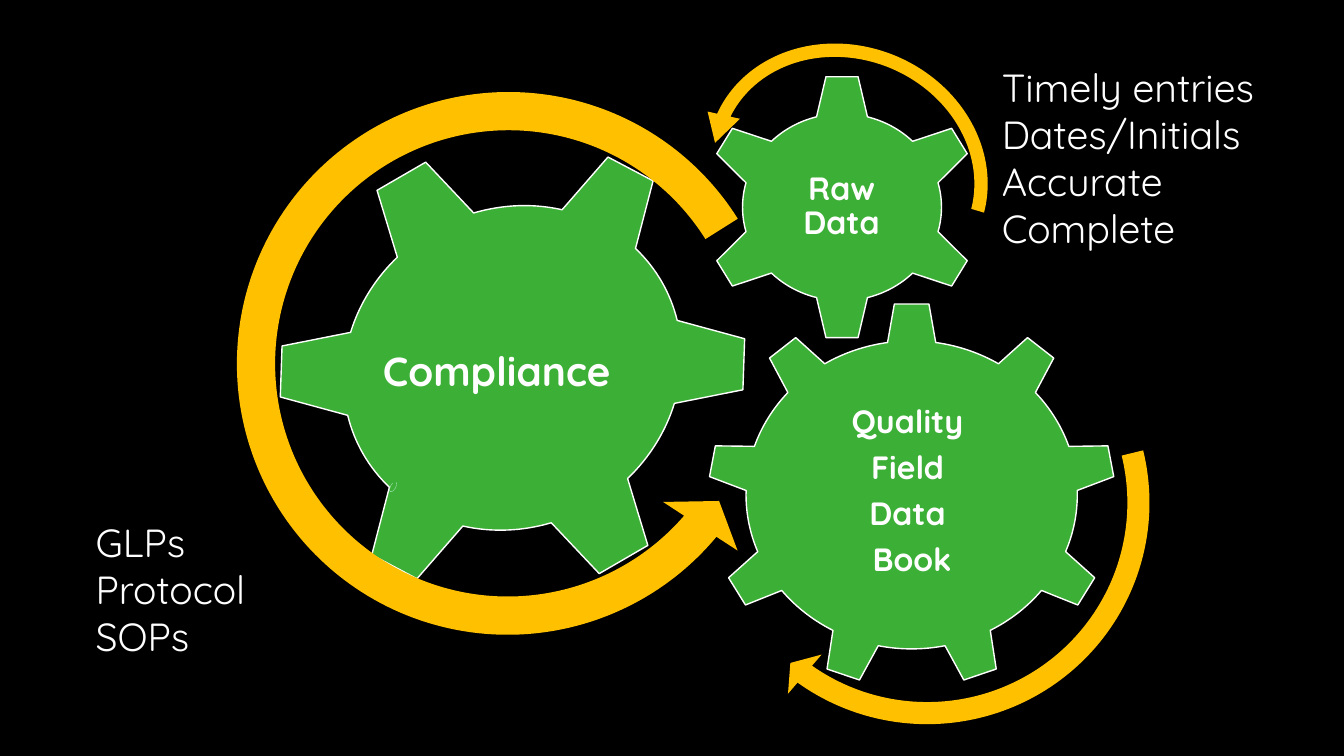
from dataclasses import dataclass
from typing import Optional

from pptx import Presentation
from pptx.dml.color import RGBColor as RGB
from pptx.enum.shapes import MSO_SHAPE as SHAPE
from pptx.enum.text import MSO_ANCHOR as ANCHOR, MSO_AUTO_SIZE as FIT, PP_ALIGN as ALIGN
from pptx.util import Pt


@dataclass(frozen=True)
class Theme:
    font: str = "Quicksand"
    back: RGB = RGB(0x00, 0x00, 0x00)
    text: RGB = RGB(0xFF, 0xFF, 0xFF)
    gear: RGB = RGB(0x3C, 0xB0, 0x36)
    arrow: RGB = RGB(0xFF, 0xC0, 0x00)
    pale: RGB = RGB(0xAB, 0xE5, 0xBF)
    title_size: int = 29
    note_size: int = 28
    gear_size: int = 23


THEME = Theme()
Box = tuple[float, float, float, float]  # left, top, width, height in points


@dataclass(frozen=True)
class Gear:
    kind: SHAPE
    box: Box
    turn: float = 0


@dataclass(frozen=True)
class Arrow:
    box: Box
    turn: float
    band: float  # band and head widths are percentages
    head: float
    angles: tuple[float, float, float]  # head sweep, end, start in degrees
    flip: Optional[str] = None
    kind: SHAPE = SHAPE.CIRCULAR_ARROW
    color: RGB = THEME.arrow


@dataclass(frozen=True)
class Label:
    box: Box
    lines: tuple[str, ...]
    size: int
    bold: bool = False
    in_gear: bool = False


GEARS = (
    Gear(SHAPE.GEAR_9, (505.4, 216, 291.6, 275)),
    Gear(SHAPE.GEAR_6, (501.8, 52.6, 199.4, 190.8)),
    Gear(SHAPE.GEAR_6, (194.4, 100.8, 343.4, 324), 329.9),
)

ARROWS = (
    # Around the data book
    Arrow((493.9, 190.1, 337, 338.4), 83.1, 4.69, 5.47, (4.98, 42.5, 263.18)),
    # Around compliance
    Arrow((151.2, 47.5, 423.4, 424.1), 215.1, 6.45, 7.5, (7.17, 174.82, 247.3), "flipV"),
    # Small mark on the compliance gear
    Arrow((276.5, 345.6, 8.6, 4.3), 120, 5.98, 6.98, (6.57, 221.9, 175.14), "flipV",
          SHAPE.LEFT_CIRCULAR_ARROW, THEME.pale),
    # Around raw data
    Arrow((496.1, 25.9, 218.2, 194.4), 203, 4.9, 6.1, (12.26, 178.17, 6.58), "flipH"),
)

LABELS = (
    Label((563, 280.8, 177.1, 141.1), ("Quality ", "Field ", "Data ", "Book"),
          THEME.gear_size, True, True),
    Label((550.8, 100.8, 100.8, 94.3), ("Raw Data",), THEME.gear_size, True, True),
    Label((266.4, 243.4, 193, 42.5), ("Compliance",), THEME.title_size, True),
    Label((708.5, 41.8, 219.6, 164.9),
          ("Timely entries", "Dates/Initials", "Accurate", "Complete"), THEME.note_size),
    Label((61.2, 366.5, 128.9, 108.7), ("GLPs", "Protocol", "SOPs"), THEME.note_size),
)


def set_all(obj: object, fmt: dict) -> None:
    for name, value in fmt.items():
        setattr(obj, name, value)


def add_filled(s, kind: SHAPE, box: Box, turn: float, color: RGB):
    sp = s.shapes.add_shape(kind, *map(Pt, box))
    sp.shadow.inherit = False
    sp.rotation = turn
    sp.fill.solid()
    sp.fill.fore_color.rgb = color
    return sp


def add_gear(s, gear: Gear) -> None:
    sp = add_filled(s, gear.kind, gear.box, gear.turn, THEME.gear)
    sp.line.color.rgb = THEME.text
    sp.line.width = Pt(1)


def add_arrow(s, arrow: Arrow) -> None:
    sp = add_filled(s, arrow.kind, arrow.box, arrow.turn, arrow.color)
    sp.line.fill.background()
    if arrow.flip:
        sp.element.spPr.xfrm.set(arrow.flip, "1")
    # Angles are stored in 1/60000 degree, adjustments in 1/100000
    values = (arrow.band / 100, *(a * 0.6 for a in arrow.angles), arrow.head / 100)
    for i, value in enumerate(values):
        sp.adjustments[i] = value


def add_label(s, label: Label) -> None:
    tf = s.shapes.add_textbox(*map(Pt, label.box)).text_frame
    tf.word_wrap = True
    if label.in_gear:
        margins = ("margin_left", "margin_top", "margin_right", "margin_bottom")
        set_all(tf, dict.fromkeys(margins, Pt(2.3)))
        tf.vertical_anchor = ANCHOR.MIDDLE
    else:
        tf.auto_size = FIT.SHAPE_TO_FIT_TEXT
    for i, line in enumerate(label.lines):
        p = tf.paragraphs[0] if i == 0 else tf.add_paragraph()
        if label.in_gear:
            set_all(p, {"alignment": ALIGN.CENTER, "line_spacing": 0.9, "space_after": Pt(8)})
        r = p.add_run()
        r.text = line
        set_all(r.font, {"name": THEME.font, "size": Pt(label.size), "bold": label.bold})
        r.font.color.rgb = THEME.text


def main() -> None:
    prs = Presentation()
    set_all(prs, {"slide_width": Pt(960), "slide_height": Pt(540)})
    s = prs.slides.add_slide(prs.slide_layouts[6])
    s.background.fill.solid()
    s.background.fill.fore_color.rgb = THEME.back

    # Gears, then the arrows over them, then all wording
    for gear in GEARS:
        add_gear(s, gear)
    for arrow in ARROWS:
        add_arrow(s, arrow)
    for label in LABELS:
        add_label(s, label)
    prs.save("out.pptx")


if __name__ == "__main__":
    main()
